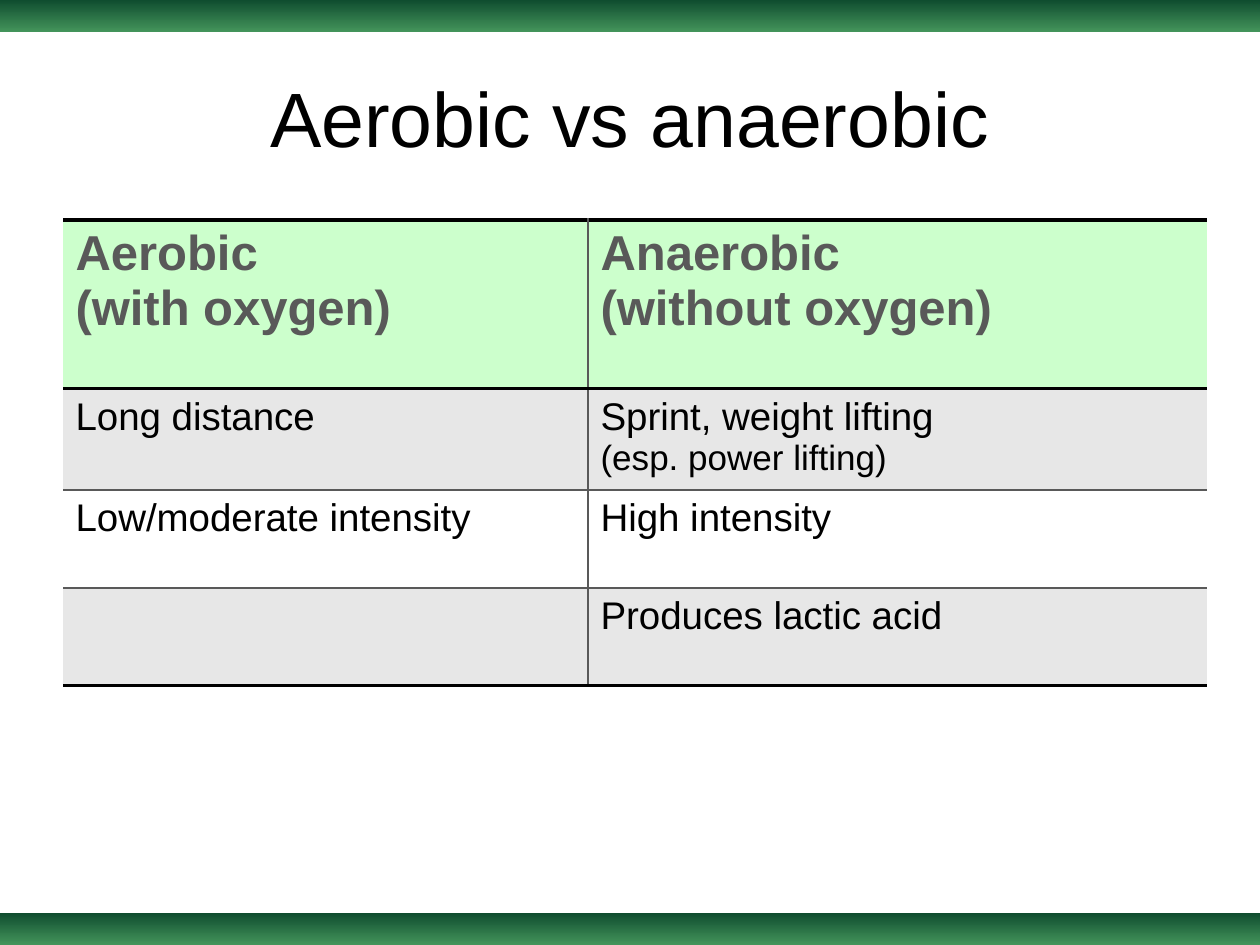
from lxml.etree import SubElement as Sub
from pptx import Presentation
from pptx.dml.color import RGBColor as RGB
from pptx.enum.shapes import MSO_SHAPE as Shape
from pptx.enum.text import MSO_ANCHOR as Anchor, PP_ALIGN as Align
from pptx.oxml.ns import qn
from pptx.util import Emu, Pt

WIDE, HIGH = 1260, 945
BAR = 32
FONT = "Arial"
HUES = {
    "dark": "0F4D2F", "green": "44945B", "mint": "CCFFCC",
    "band": "E7E7E7", "white": "FFFFFF", "black": "000000", "gray": "595959",
}
COLS = [525, 619]
TALL = [169, 101, 98, 98]
# Each cell holds (text, size) lines
ROWS = [
    [[("Aerobic", 28), ("(with oxygen)", 28)],
     [("Anaerobic", 28), ("(without oxygen)", 28)]],
    [[("Long distance", 22)],
     [("Sprint, weight lifting", 22), ("(esp. power lifting)", 20)]],
    [[("Low/moderate intensity", 22)], [("High intensity", 22)]],
    [[], [("Produces lactic acid", 22)]],
]
FILLS = ["mint", "band", "white", "band"]
THICK, THIN = ("black", 2), ("gray", 1)
RULES = [THICK, THICK, THIN, THIN, THICK]  # above, between and below the rows


def px(num):
    return Emu(round(num * 914400 / 126))


def hue(name):
    return RGB.from_string(HUES[name])


def write(frame, lines, color, bold=False, align=Align.LEFT):
    for i, (text, size) in enumerate(lines):
        para = frame.add_paragraph() if i else frame.paragraphs[0]
        para.text = text
        para.alignment = align
        font = para.font
        font.name, font.size, font.bold = FONT, Pt(size), bold
        font.color.rgb = hue(color)


def add_bar(slide, top, tall):
    bar = slide.shapes.add_shape(Shape.RECTANGLE, 0, px(top), px(WIDE), px(tall))
    bar.shadow.inherit = False
    bar.line.fill.background()
    bar.fill.gradient()
    bar.fill.gradient_angle = 270
    for stop, name, pos in zip(bar.fill.gradient_stops, ("dark", "green"), (0, 1)):
        stop.color.rgb = hue(name)
        stop.position = pos


def add_title(slide, text):
    box = slide.shapes.add_textbox(px(63), px(38), px(1134), px(158))
    frame = box.text_frame
    frame.word_wrap = True
    frame.vertical_anchor = Anchor.MIDDLE
    write(frame, [(text, 44)], "black", align=Align.CENTER)


def set_edge(cell, side, rule):
    line = Sub(cell._tc.get_or_add_tcPr(), qn("a:ln" + side))
    if rule is None:
        line.set("w", "0")
        Sub(line, qn("a:noFill"))
        return
    name, width = rule
    line.set("w", str(Pt(width)))
    Sub(Sub(line, qn("a:solidFill")), qn("a:srgbClr")).set("val", HUES[name])


def add_grid(slide):
    grid = slide.shapes.add_table(
        len(ROWS), len(COLS), px(63), px(220), px(sum(COLS)), px(sum(TALL))).table
    for col, wide in zip(grid.columns, COLS):
        col.width = px(wide)
    last = len(COLS) - 1
    for r, row in enumerate(ROWS):
        grid.rows[r].height = px(TALL[r])
        for c, lines in enumerate(row):
            cell = grid.cell(r, c)
            # Edges must come before the fill in the cell's XML
            set_edge(cell, "L", THIN if c else None)
            set_edge(cell, "R", THIN if c < last else None)
            set_edge(cell, "T", RULES[r])
            set_edge(cell, "B", RULES[r + 1])
            cell.fill.solid()
            cell.fill.fore_color.rgb = hue(FILLS[r])
            write(cell.text_frame, lines, "black" if r else "gray", bold=r == 0)


def main():
    deck = Presentation()
    deck.slide_width, deck.slide_height = px(WIDE), px(HIGH)
    slide = deck.slides.add_slide(deck.slide_layouts[6])
    # Top and bottom bars
    add_bar(slide, 0, BAR)
    add_bar(slide, HIGH - BAR, BAR)
    # Title and comparison
    add_title(slide, "Aerobic vs anaerobic")
    add_grid(slide)
    deck.save("out.pptx")


if __name__ == "__main__":
    main()
